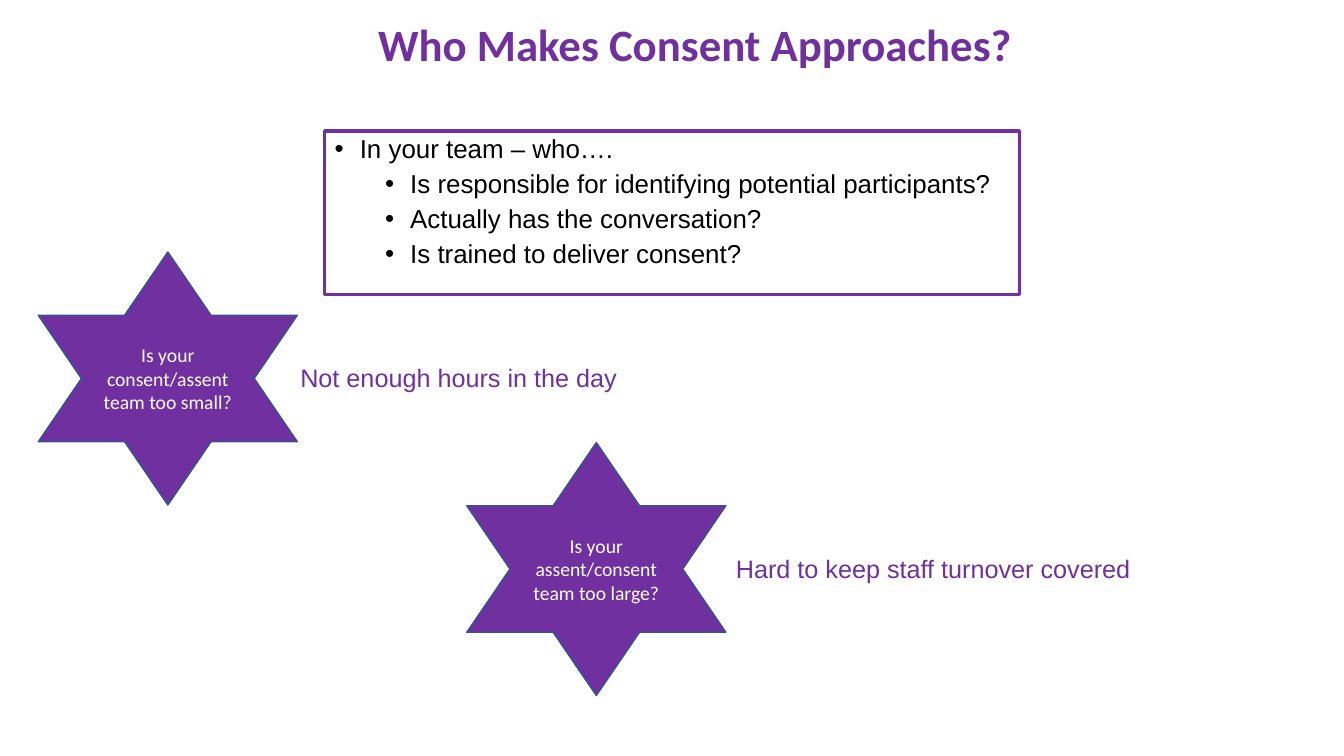
"""Build the slide on who makes consent approaches."""
from dataclasses import dataclass

from lxml import etree
from pptx import Presentation
from pptx.dml.color import RGBColor
from pptx.enum import shapes, text
from pptx.oxml import ns
from pptx.util import Inches, Pt


@dataclass(frozen=True)
class Theme:
    purple: RGBColor = RGBColor(0x70, 0x30, 0xA0)
    star_edge: RGBColor = RGBColor(0x32, 0x54, 0x91)
    black: RGBColor = RGBColor(0, 0, 0)
    white: RGBColor = RGBColor(255, 255, 255)
    heading: str = "Calibri"
    body: str = "Arial"
    title_size: float = 32
    question_size: float = 18.5
    answer_size: float = 18
    star_size: float = 14


theme = Theme()
LEFT, CENTER = text.PP_ALIGN.LEFT, text.PP_ALIGN.CENTER


def add_run(paragraph, words, face, size, color, align=LEFT, bold=False):
    paragraph.alignment = align
    run = paragraph.add_run()
    run.text = words
    run.font.name = face
    run.font.size = Pt(size)
    run.font.color.rgb = color
    run.font.bold = bold


def add_label(left, top, width, height):
    label = slide.shapes.add_textbox(Inches(left), Inches(top), Inches(width), Inches(height))
    label.text_frame.word_wrap = True
    label.text_frame.auto_size = text.MSO_AUTO_SIZE.SHAPE_TO_FIT_TEXT
    return label.text_frame.paragraphs[0]


deck = Presentation()
deck.slide_width, deck.slide_height = Inches(13.33), Inches(7.5)
slide = deck.slides.add_slide(deck.slide_layouts[6])

title = add_label(0.71, 0.12, 12.37, 0.64)
add_run(title, "Who Makes Consent Approaches?", theme.heading, theme.title_size,
        theme.purple, CENTER, True)

team_questions = slide.shapes.add_shape(
    shapes.MSO_SHAPE.RECTANGLE, Inches(3.22), Inches(1.3), Inches(6.89), Inches(1.62))
team_questions.shadow.inherit = False
team_questions.fill.background()
team_questions.line.color.rgb = theme.purple
team_questions.line.width = Pt(2.5)
question_frame = team_questions.text_frame
question_frame.word_wrap = True
question_frame.vertical_anchor = text.MSO_ANCHOR.TOP

questions = [
    (0, "In your team – who…."),
    (1, "Is responsible for identifying potential participants?"),
    (1, "Actually has the conversation?"),
    (1, "Is trained to deliver consent?"),
]
for index, (level, question) in enumerate(questions):
    line = question_frame.paragraphs[0] if index == 0 else question_frame.add_paragraph()
    line.level = level
    line.line_spacing = 0.9
    line.space_before = Pt(5 if index else 0)
    properties = line._p.get_or_add_pPr()
    properties.set("marL", str(Inches(0.25 + 0.5 * level)))
    properties.set("indent", str(Inches(-0.25)))
    etree.SubElement(properties, ns.qn("a:buFont"), typeface=theme.body)
    etree.SubElement(properties, ns.qn("a:buChar"), char="•")
    add_run(line, question, theme.body, theme.question_size, theme.black)

team_sizes = [
    (0.38, 2.5, "Is your consent/assent team too small?",
     2.88, 3.49, "Not enough hours in the day"),
    (4.63, 4.39, "Is your assent/consent team too large?",
     7.2, 4.24, "Hard to keep staff turnover covered"),
]
for star_left, star_top, concern, effect_left, effect_width, effect in team_sizes:
    star = slide.shapes.add_shape(
        shapes.MSO_SHAPE.STAR_6_POINT, Inches(star_left), Inches(star_top),
        Inches(2.57), Inches(2.51))
    star.shadow.inherit = False
    star.fill.solid()
    star.fill.fore_color.rgb = theme.purple
    star.line.color.rgb = theme.star_edge
    star.line.width = Pt(1)
    star.text_frame.word_wrap = True
    star.text_frame.vertical_anchor = text.MSO_ANCHOR.MIDDLE
    add_run(star.text_frame.paragraphs[0], concern, theme.heading, theme.star_size,
            theme.white, CENTER)
    add_run(add_label(effect_left, star_top + 1.05, effect_width, 0.4), effect,
            theme.body, theme.answer_size, theme.purple)

deck.save("out.pptx")
